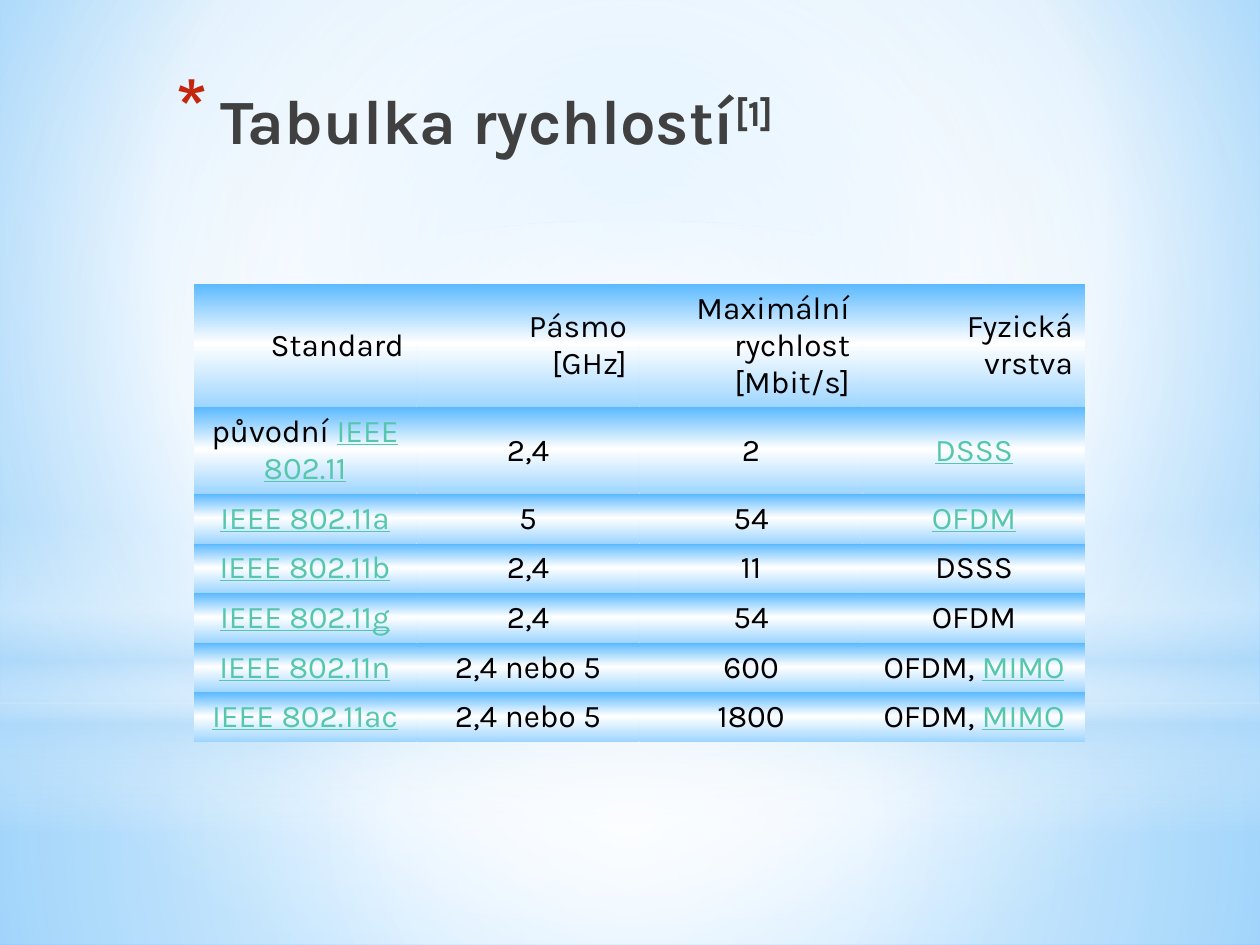
"""Build a slide with a table of wireless standards and their speeds."""
from dataclasses import dataclass

from pptx import Presentation
from pptx.dml.color import RGBColor
from pptx.enum.shapes import MSO_SHAPE
from pptx.enum.text import MSO_ANCHOR, MSO_AUTO_SIZE, PP_ALIGN
from pptx.oxml import parse_xml
from pptx.oxml.ns import nsdecls
from pptx.util import Pt

RECT, OVAL = MSO_SHAPE.RECTANGLE, MSO_SHAPE.OVAL
TOP, MIDDLE = MSO_ANCHOR.TOP, MSO_ANCHOR.MIDDLE
LEFT, CENTER, RIGHT = PP_ALIGN.LEFT, PP_ALIGN.CENTER, PP_ALIGN.RIGHT
NO_FIT = MSO_AUTO_SIZE.NONE
FONT = "Karla"
PLAIN_STYLE = "{2D5ABB26-0587-4C30-8999-92F81FD0307C}"
COLORS = {
    "sky": "9ED5FF", "blue": "5BB9FF", "pale": "B4DCFA", "white": "FFFFFF",
    "black": "000000", "gray": "404040", "navy": "212745",
    "link": "56C7AA", "star": "C3260C",
}


@dataclass(frozen=True)
class Grad:
    """Stops of (place, colour, opacity) with an angle or a round focus."""
    stops: tuple
    angle: int = 0
    focus: tuple = ()


@dataclass(frozen=True)
class Glow:
    """A soft full-width layer of the backdrop."""
    kind: int
    top: float
    height: float
    grad: Grad


MID = (50, 50, 50, 50)
BACK = Grad(((0, "sky", 100), (60, "white", 100), (100, "blue", 100)),
            focus=(20, 10, 20, 60))
BAND = Grad(((0, "sky", 100), (52, "white", 100), (100, "blue", 100)), 270)
INK = Grad(((0, "black", 100), (40, "gray", 100), (100, "navy", 65)), 90)
GLOWS = (
    Glow(RECT, 401.76, 138.24, Grad(
        ((0, "white", 91), (37, "white", 76), (100, "pale", 79)), focus=MID)),
    Glow(RECT, 0, 401.76, Grad(
        ((0, "white", 89), (48, "white", 62), (100, "pale", 79)), focus=MID)),
    Glow(RECT, 296.64, 180, Grad(
        ((0, "white", 0), (29, "white", 30), (45, "pale", 40),
         (55, "white", 26), (65, "pale", 60), (100, "white", 0)), 90)),
    Glow(OVAL, 126, 401.76, Grad(
        ((0, "white", 100), (56, "white", 0)), focus=MID)),
)
ROWS = (
    ("Standard", "Pásmo\n[GHz]", "Maximální\nrychlost\n[Mbit/s]",
     "Fyzická\nvrstva"),
    ("původní |IEEE 802.11|", "2,4", "2", "|DSSS|"),
    ("|IEEE 802.11a|", "5", "54", "|OFDM|"),
    ("|IEEE 802.11b|", "2,4", "11", "DSSS"),
    ("|IEEE 802.11g|", "2,4", "54", "OFDM"),
    ("|IEEE 802.11n|", "2,4 nebo 5", "600", "OFDM, |MIMO|"),
    ("|IEEE 802.11ac|", "2,4 nebo 5", "1800", "OFDM, |MIMO|"),
)
HEIGHTS = (70.5, 49) + (28,) * 5
COL_WIDTH = 127.44


def paint(root, grad: Grad) -> None:
    """Give every gradient fill below root the stops of grad."""
    stops = "".join(
        f'<a:gs pos="{place * 1000}"><a:srgbClr val="{COLORS[name]}">'
        f'<a:alpha val="{alpha * 1000}"/></a:srgbClr></a:gs>'
        for place, name, alpha in grad.stops)
    if grad.focus:
        sides = " ".join(f'{side}="{value * 1000}"'
                         for side, value in zip("ltrb", grad.focus))
        way = f'<a:path path="circle"><a:fillToRect {sides}/></a:path>'
    else:
        way = f'<a:lin ang="{grad.angle * 60000}" scaled="0"/>'
    for old in root.xpath(".//a:gradFill"):
        old.getparent().replace(old, parse_xml(
            f'<a:gradFill {nsdecls("a")} rotWithShape="1">'
            f'<a:gsLst>{stops}</a:gsLst>{way}</a:gradFill>'))


def write(para, text: str, size=18, color="black", bold=False, link=False,
          align=CENTER):
    """Add text to a paragraph and return its last run."""
    para.alignment = align
    for index, line in enumerate(text.split("\n")):
        if index:
            para.add_line_break()
        run = para.add_run()
        run.text = line
        font = run.font
        font.name, font.size, font.bold = FONT, Pt(size), bold
        font.underline = link
        font.color.rgb = RGBColor.from_string(COLORS["link" if link else color])
    return run


def add_glow(slide, glow: Glow, width: int) -> None:
    """Draw one layer of the backdrop."""
    shape = slide.shapes.add_shape(
        glow.kind, 0, Pt(glow.top), width, Pt(glow.height))
    shape.shadow.inherit = False
    shape.line.fill.background()
    shape.fill.gradient()
    paint(shape.element, glow.grad)


def set_title(title) -> None:
    """Place the title and give it a star bullet and a raised mark."""
    title.left, title.top = Pt(93.6), Pt(43.2)
    title.width, title.height = Pt(512.64), Pt(90)
    frame = title.text_frame
    frame.auto_size, frame.vertical_anchor = NO_FIT, TOP
    frame.word_wrap = True
    para = frame.paragraphs[0]
    for text in ("Tabulka rychlostí", "[1]"):
        run = write(para, text, size=36, color="gray", bold=True, align=LEFT)
        run.font.fill.gradient()
    paint(title.element, INK)
    title.element.xpath(".//a:rPr")[-1].set("baseline", "30000")
    props = title.element.xpath(".//a:pPr")[0]
    props.set("marL", str(Pt(25.2)))
    props.set("indent", str(Pt(-25.2)))
    for item in (f'buClr {nsdecls("a")}><a:srgbClr val="{COLORS["star"]}"/>'
                 '</a:buClr',
                 f'buSzPct {nsdecls("a")} val="128000"/',
                 f'buChar {nsdecls("a")} char="*"/'):
        props.append(parse_xml(f"<a:{item}>"))


def add_grid(slide) -> None:
    """Draw the table of standards."""
    count = len(ROWS[0])
    frame = slide.shapes.add_table(
        len(ROWS), count, Pt(110.6), Pt(162.2),
        Pt(COL_WIDTH * count), Pt(sum(HEIGHTS)))
    table = frame.table
    table.first_row = table.horz_banding = False
    frame.element.xpath(".//a:tableStyleId")[0].text = PLAIN_STYLE
    for col in table.columns:
        col.width = Pt(COL_WIDTH)
    for r, (values, height) in enumerate(zip(ROWS, HEIGHTS)):
        table.rows[r].height = Pt(height)
        for c, value in enumerate(values):
            cell = table.cell(r, c)
            cell.vertical_anchor = MIDDLE
            cell.fill.gradient()
            para = cell.text_frame.paragraphs[0]
            for n, part in enumerate(value.split("|")):
                if part:
                    write(para, part, link=n % 2 == 1,
                          align=CENTER if r else RIGHT)
    paint(frame.element, BAND)


def main() -> None:
    """Build and save the slide."""
    deck = Presentation()
    deck.slide_width, deck.slide_height = Pt(720), Pt(540)
    slide = deck.slides.add_slide(deck.slide_layouts[5])
    slide.background.fill.gradient()
    paint(slide.element, BACK)
    for glow in GLOWS:
        add_glow(slide, glow, deck.slide_width)
    title = slide.shapes.title
    title.element.getparent().append(title.element)
    set_title(title)
    add_grid(slide)
    deck.save("out.pptx")


if __name__ == "__main__":
    main()
